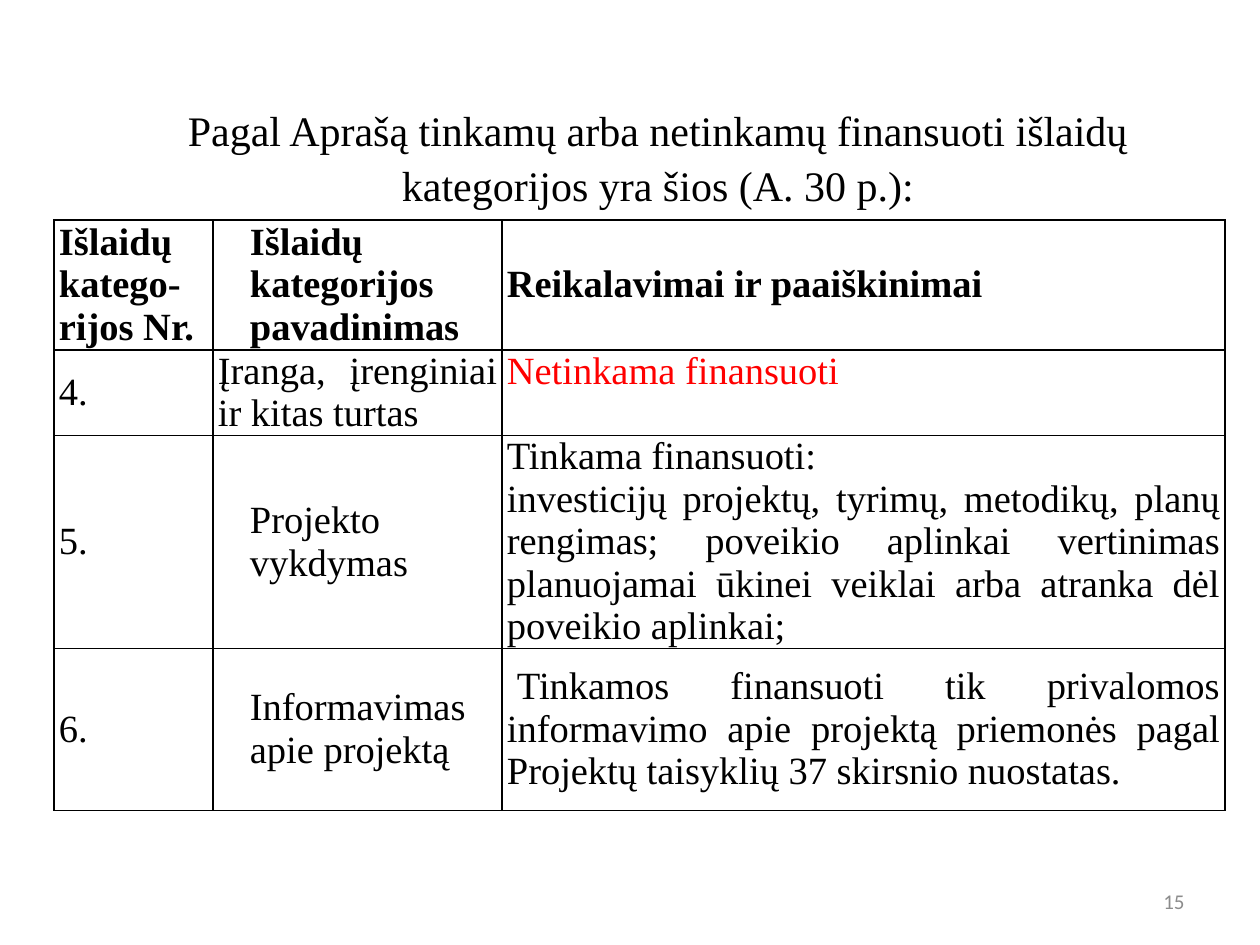
from lxml import etree
from pptx import Presentation
from pptx.dml.color import RGBColor
from pptx.enum.text import MSO_ANCHOR, MSO_AUTO_SIZE, PP_ALIGN
from pptx.oxml.ns import qn
from pptx.util import Pt

PX = 914400 / 126
BLACK = RGBColor(0, 0, 0)
WHITE = RGBColor(255, 255, 255)
RED = RGBColor(255, 0, 0)
GREY = RGBColor(0x8C, 0x8C, 0x8C)
SERIF, SANS = "Times New Roman", "Calibri"
TOP, MIDDLE = MSO_ANCHOR.TOP, MSO_ANCHOR.MIDDLE
CENTER, RIGHT, JUSTIFY = PP_ALIGN.CENTER, PP_ALIGN.RIGHT, PP_ALIGN.JUSTIFY
NO_FIT = MSO_AUTO_SIZE.NONE

TITLE = "Pagal Aprašą tinkamų arba netinkamų finansuoti išlaidų kategorijos yra šios (A. 30 p.):"
COLUMNS = [159, 289, 723]
ROWS = [130, 85, 213, 162]
CELLS = [
    ["Išlaidų katego-rijos Nr.", "Išlaidų kategorijos pavadinimas", "Reikalavimai ir paaiškinimai"],
    ["4.", "Įranga, įrenginiai ir kitas turtas", "Netinkama finansuoti"],
    ["5.", "Projekto vykdymas",
     "Tinkama finansuoti:\ninvesticijų projektų, tyrimų, metodikų, planų rengimas; poveikio aplinkai "
     "vertinimas planuojamai ūkinei veiklai arba atranka dėl poveikio aplinkai;"],
    ["6.", "Informavimas apie projektą",
     "Tinkamos finansuoti tik privalomos informavimo apie projektą priemonės pagal Projektų "
     "taisyklių 37 skirsnio nuostatas."],
]
LEFT_INDENTS = {(0, 1): 32, (2, 1): 32, (3, 1): 32}
FIRST_INDENTS = {(3, 2): 10}


def px(length):
    """Turn pixels into EMU."""
    return round(length * PX)


def set_text(frame, text, size, font, color, align, bold=False):
    """Fill a text frame and format all its runs alike."""
    frame.text = text
    frame.word_wrap = True
    for para in frame.paragraphs:
        para.alignment = align
        for span in para.runs:
            span.font.size = Pt(size)
            span.font.name = font
            span.font.bold = bold
            span.font.color.rgb = color


def add_title(page, left, top, width, height):
    """Place the centred heading in the title placeholder."""
    title = page.shapes.title
    title.left, title.top, title.width, title.height = map(px, (left, top, width, height))
    frame = title.text_frame
    set_text(frame, TITLE, 24, SERIF, BLACK, CENTER)
    frame.vertical_anchor = MIDDLE
    frame.auto_size = NO_FIT
    frame.paragraphs[0].line_spacing = 1.1


def add_borders(cell):
    """Draw a thin black line on each side of a cell."""
    properties = cell._tc.get_or_add_tcPr()
    for side in ("a:lnL", "a:lnR", "a:lnT", "a:lnB"):
        line = etree.SubElement(properties, qn(side), w=str(Pt(1)))
        fill = etree.SubElement(line, qn("a:solidFill"))
        etree.SubElement(fill, qn("a:srgbClr"), val=str(BLACK))


def format_cell(cell, row, column):
    """Write one cell with its indents, borders and fill."""
    is_verdict = (row, column) == (1, 2)
    cell.margin_left = cell.margin_right = px(5)
    cell.margin_top = cell.margin_bottom = 0
    cell.vertical_anchor = TOP if is_verdict else MIDDLE
    set_text(cell.text_frame, CELLS[row][column], 22, SERIF,
             RED if is_verdict else BLACK, JUSTIFY, bold=row == 0)
    for para in cell.text_frame.paragraphs:
        properties = para._p.get_or_add_pPr()
        properties.set("marL", str(px(LEFT_INDENTS.get((row, column), 0))))
        properties.set("indent", str(px(FIRST_INDENTS.get((row, column), 0))))
    add_borders(cell)
    cell.fill.solid()
    cell.fill.fore_color.rgb = WHITE


def add_cost_table(page, left, top):
    """Place the table of cost categories."""
    table = page.shapes.add_table(len(ROWS), len(COLUMNS), px(left), px(top),
                                  px(sum(COLUMNS)), px(sum(ROWS))).table
    table.first_row = table.horz_banding = False
    for column, width in zip(table.columns, COLUMNS):
        column.width = px(width)
    for row, height in enumerate(ROWS):
        table.rows[row].height = px(height)
        for column in range(len(COLUMNS)):
            format_cell(table.cell(row, column), row, column)


def add_page_number(page, left, top, width, height):
    """Place the page number at the right of its box."""
    box = page.shapes.add_textbox(*map(px, (left, top, width, height)))
    set_text(box.text_frame, "15", 12, SANS, GREY, RIGHT)
    box.text_frame.vertical_anchor = MIDDLE


def main():
    """Build and save the deck."""
    deck = Presentation()
    deck.slide_width, deck.slide_height = px(1260), px(945)
    page = deck.slides.add_slide(deck.slide_layouts[5])
    add_title(page, 91, 76, 1134, 158)
    add_cost_table(page, 54, 220)
    add_page_number(page, 903, 876, 294, 50)
    deck.save("out.pptx")


if __name__ == "__main__":
    main()
